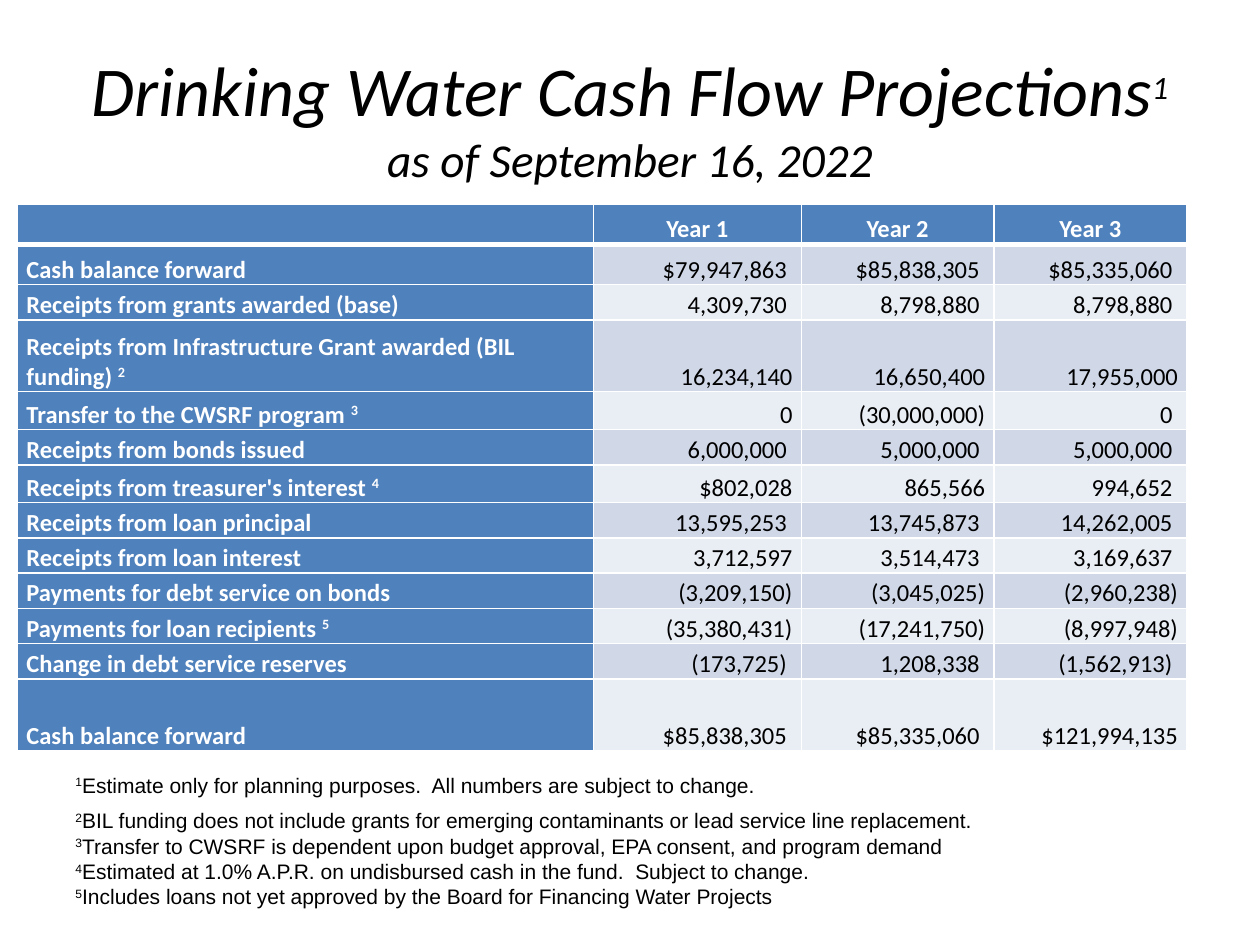
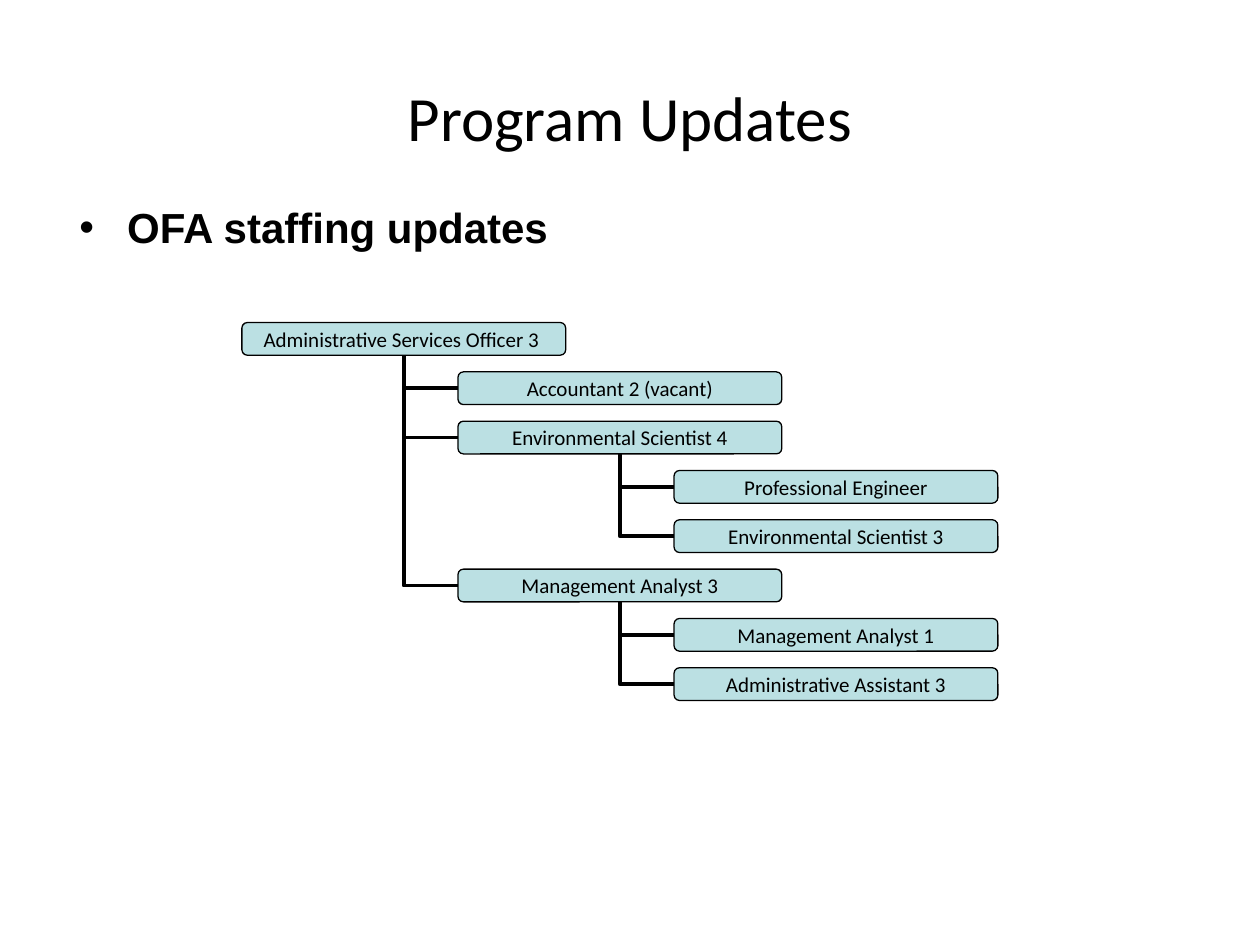
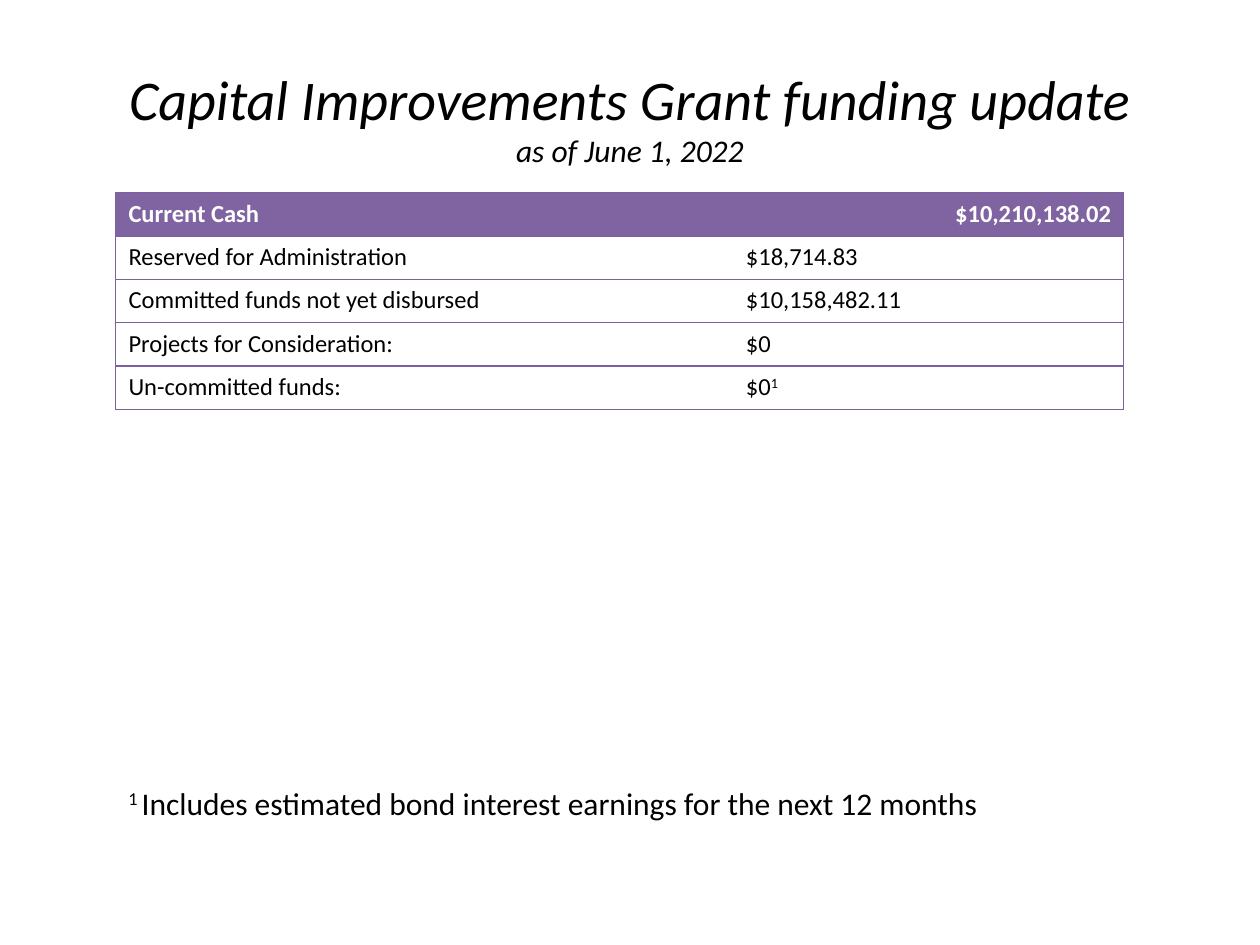
from copy import deepcopy

from pptx import Presentation
from pptx.dml.color import RGBColor
from pptx.enum.shapes import MSO_CONNECTOR, MSO_SHAPE
from pptx.enum.text import MSO_ANCHOR, MSO_AUTO_SIZE, PP_ALIGN
from pptx.oxml.ns import qn
from pptx.util import Inches, Pt
from lxml.etree import SubElement

COLORS = {
    "text": "000000", "white": "FFFFFF",
    "blue": "4F81BD", "band_dark": "D0D8E8", "band_light": "E9EDF4",
    "purple": "8064A2", "purple_line": "7D60A0", "staff_box": "BBE0E3",
}
HEADING_FONT = "Calibri"
NOTE_FONT = "Arial"
TITLE_AND_CONTENT, TITLE_ONLY = 1, 5

CASH_FLOW = [
    ("", "Year 1", "Year 2", "Year 3"),
    ("Cash balance forward", "$79,947,863 ", "$85,838,305 ", "$85,335,060 "),
    ("Receipts from grants awarded (base)", "4,309,730 ", "8,798,880 ", "8,798,880 "),
    ("Receipts from Infrastructure Grant awarded (BIL funding) ^2",
     "16,234,140", "16,650,400", "17,955,000"),
    ("Transfer to the CWSRF program ^3", "0", "(30,000,000)", "0 "),
    ("Receipts from bonds issued", "6,000,000 ", "5,000,000 ", "5,000,000 "),
    ("Receipts from treasurer's interest ^4", "$802,028", "865,566", "994,652 "),
    ("Receipts from loan principal", "13,595,253 ", "13,745,873 ", "14,262,005 "),
    ("Receipts from loan interest", "3,712,597", "3,514,473 ", "3,169,637 "),
    ("Payments for debt service on bonds", "(3,209,150)", "(3,045,025)", "(2,960,238)"),
    ("Payments for loan recipients ^5", "(35,380,431)", "(17,241,750)", "(8,997,948)"),
    ("Change in debt service reserves", "(173,725) ", "1,208,338 ", "(1,562,913) "),
    ("Cash balance forward", "$85,838,305 ", "$85,335,060 ", "$121,994,135"),
]
CASH_FLOW_HEIGHTS = [0.32, 0.32, 0.28, 0.57, 0.3, 0.28, 0.3] + [0.28] * 5 + [0.57]

CASH_FLOW_NOTES = [
    "^1^Estimate only for planning purposes.  All numbers are subject to change.",
    "^2^BIL funding does not include grants for emerging contaminants or lead service line replacement.",
    "^3^Transfer to CWSRF is dependent upon budget approval, EPA consent, and program demand",
    "^4^Estimated at 1.0% A.P.R. on undisbursed cash in the fund.  Subject to change.",
    "^5^Includes loans not yet approved by the Board for Financing Water Projects",
]

# Level and job title, from top to bottom
STAFF = [
    (0, "Administrative Services Officer 3 "),
    (1, "Accountant 2 (vacant)"),
    (1, "Environmental Scientist 4"),
    (2, "Professional Engineer"),
    (2, "Environmental Scientist 3"),
    (1, "Management Analyst 3"),
    (2, "Management Analyst 1"),
    (2, "Administrative Assistant 3"),
]

GRANT_FUNDS = [
    ("Current Cash", "$10,210,138.02"),
    ("Reserved for Administration", "$18,714.83"),
    ("Committed funds not yet disbursed", "$10,158,482.11"),
    ("Projects for Consideration:", "$0"),
    ("Un-committed funds:", "$0^1"),
]


def write(paragraph, text, size, font=HEADING_FONT, color="text",
          bold=False, italic=False, align=None):
    """Add text to a paragraph; what stands between ^ marks is superscript."""
    if align is not None:
        paragraph.alignment = align
    for index, part in enumerate(text.split("^")):
        if not part:
            continue
        run = paragraph.add_run()
        run.text = part
        run.font.name = font
        run.font.size = Pt(size)
        run.font.bold = bold
        run.font.italic = italic
        run.font.color.rgb = RGBColor.from_string(COLORS[color])
        if index % 2:
            run._r.get_or_add_rPr().set("baseline", "30000")


def place(shape, left, top, width, height):
    shape.left, shape.top = Inches(left), Inches(top)
    shape.width, shape.height = Inches(width), Inches(height)


def add_title(slide, lines, italic=True):
    """Fill the title; each line is a list of (text, size) pieces."""
    title = slide.shapes.title
    place(title, 0.5, 0.3, 9, 1.25)
    frame = title.text_frame
    frame.auto_size = MSO_AUTO_SIZE.NONE
    frame.vertical_anchor = MSO_ANCHOR.MIDDLE
    paragraph = frame.paragraphs[0]
    for index, pieces in enumerate(lines):
        if index:
            last_run = paragraph.runs[-1]
            paragraph.add_line_break()
            paragraph._p[-1].append(deepcopy(last_run._r.rPr))
        for text, size in pieces:
            write(paragraph, text, size, italic=italic, align=PP_ALIGN.CENTER)


def add_notes(slide, box, notes, size, font):
    frame = slide.shapes.add_textbox(*map(Inches, box)).text_frame
    frame.word_wrap = True
    for index, note in enumerate(notes):
        paragraph = frame.add_paragraph() if index else frame.paragraphs[0]
        write(paragraph, note, size, font=font)
    return frame


def add_plain_table(slide, rows, left, top, widths, heights):
    """Add a table without banding, sized by its columns and rows."""
    frame = slide.shapes.add_table(
        len(rows), len(widths), Inches(left), Inches(top),
        Inches(sum(widths)), Inches(sum(heights)))
    table = frame.table
    table.first_row = table.horz_banding = False
    for column, width in zip(table.columns, widths):
        column.width = Inches(width)
    for row, height in zip(table.rows, heights):
        row.height = Inches(height)
    return table


def set_borders(cell, color, **widths):
    """Draw the sides given as L, R, T or B in points and clear the others."""
    properties = cell._tc.get_or_add_tcPr()
    for side in "LRTB":
        width = widths.get(side, 0)
        line = SubElement(properties, qn(f"a:ln{side}"), w=str(Pt(width)))
        if width:
            fill = SubElement(line, qn("a:solidFill"))
            SubElement(fill, qn("a:srgbClr"), val=COLORS[color])
        else:
            SubElement(line, qn("a:noFill"))


def fill_solid(target, color):
    target.fill.solid()
    target.fill.fore_color.rgb = RGBColor.from_string(COLORS[color])


def add_cash_flow_table(slide):
    table = add_plain_table(slide, CASH_FLOW, 0.14, 1.62,
                            [4.57, 1.65, 1.53, 1.53], CASH_FLOW_HEIGHTS)
    for r, row in enumerate(CASH_FLOW):
        for c, text in enumerate(row):
            cell = table.cell(r, c)
            heading = r == 0 or c == 0
            set_borders(cell, "white", L=1, R=1,
                        T=3 if r == 1 else 1, B=3 if r == 0 else 1)
            band = "band_dark" if r % 2 else "band_light"
            fill_solid(cell, "blue" if heading else band)
            cell.margin_left = cell.margin_right = Inches(0.07)
            cell.margin_top = cell.margin_bottom = 0
            cell.vertical_anchor = MSO_ANCHOR.BOTTOM
            align = (PP_ALIGN.LEFT if c == 0
                     else PP_ALIGN.CENTER if r == 0 else PP_ALIGN.RIGHT)
            write(cell.text_frame.paragraphs[0], text, 14, bold=heading,
                  color="white" if heading else "text", align=align)


def add_grant_table(slide):
    table = add_plain_table(slide, GRANT_FUNDS, 0.92, 1.53, [4.9, 3.1],
                            [0.344] * len(GRANT_FUNDS))
    for r, row in enumerate(GRANT_FUNDS):
        for c, text in enumerate(row):
            cell = table.cell(r, c)
            outer_side = "R" if c else "L"
            set_borders(cell, "purple_line", T=0.75, B=0.75, **{outer_side: 0.75})
            if r == 0:
                fill_solid(cell, "purple")
            else:
                cell.fill.background()
            right = r == 0 and c == 1
            write(cell.text_frame.paragraphs[0], text, 14, bold=r == 0,
                  color="text" if r else "white",
                  align=PP_ALIGN.RIGHT if right else PP_ALIGN.LEFT)


def add_staff_box(slide, text, left, top):
    box = slide.shapes.add_shape(MSO_SHAPE.ROUNDED_RECTANGLE, Inches(left),
                                 Inches(top), Inches(2.57), Inches(0.26))
    box.shadow.inherit = False
    fill_solid(box, "staff_box")
    box.line.color.rgb = RGBColor.from_string(COLORS["text"])
    box.line.width = Pt(0.75)
    frame = box.text_frame
    frame.margin_left = frame.margin_right = 0
    frame.margin_top = frame.margin_bottom = 0
    frame.vertical_anchor = MSO_ANCHOR.MIDDLE
    write(frame.paragraphs[0], text, 12, align=PP_ALIGN.CENTER)
    return box


def join_to_manager(slide, box, manager):
    """Draw an elbow from the left of a box to the bottom of its manager."""
    connector = slide.shapes.add_connector(MSO_CONNECTOR.ELBOW, 0, 0, 0, 0)
    connector.begin_connect(box, 1)
    connector.end_connect(manager, 2)
    connector.line.color.rgb = RGBColor.from_string(COLORS["text"])
    connector.line.width = Pt(2.25)
    properties = connector._element.spPr
    properties.find(qn("a:prstGeom")).set("prst", "bentConnector2")
    SubElement(properties, qn("a:effectLst"))


def add_staff_chart(slide):
    left, top, bottom, level_step = 1.92, 2.56, 5.3, 1.715
    row_step = (bottom - top) / (len(STAFF) - 1)
    latest = {}
    for row, (level, job) in enumerate(STAFF):
        box = add_staff_box(slide, job, left + level * level_step,
                            top + row * row_step)
        latest[level] = box
        if level:
            join_to_manager(slide, box, latest[level - 1])


def add_bullet(slide, text):
    body = slide.placeholders[1]
    place(body, 0.53, 1.55, 9, 5.12)
    paragraph = body.text_frame.paragraphs[0]
    properties = paragraph._p.get_or_add_pPr()
    properties.set("marL", str(Inches(0.38)))
    properties.set("indent", str(-Inches(0.38)))
    SubElement(properties, qn("a:buChar"), char="•")
    paragraph.space_before = 0
    write(paragraph, text, 24, font=NOTE_FONT, bold=True)


def main():
    presentation = Presentation()
    presentation.slide_width, presentation.slide_height = Inches(10), Inches(7.5)

    def new_slide(layout):
        return presentation.slides.add_slide(presentation.slide_layouts[layout])

    slide = new_slide(TITLE_ONLY)
    add_title(slide, [[("Drinking Water Cash Flow Projections", 40), ("^1", 32)],
                      [("as of September 16, 2022", 27)]])
    add_cash_flow_table(slide)
    notes = add_notes(slide, (0.5, 6.08, 8.58, 1.19), CASH_FLOW_NOTES, 12, NOTE_FONT)
    notes.paragraphs[1].space_before = Pt(6)

    slide = new_slide(TITLE_AND_CONTENT)
    add_title(slide, [[("Program Updates", 36)]], italic=False)
    add_bullet(slide, "OFA staffing updates")
    add_staff_chart(slide)

    slide = new_slide(TITLE_ONLY)
    add_title(slide, [[("Capital Improvements Grant funding update", 32)],
                      [("as of June 1, 2022", 18)]])
    add_grant_table(slide)
    add_notes(slide, (0.92, 6.17, 8, 0.4),
              ["^1 ^Includes estimated bond interest earnings for the next 12 months"],
              18, HEADING_FONT)

    presentation.save("out.pptx")


if __name__ == "__main__":
    main()
